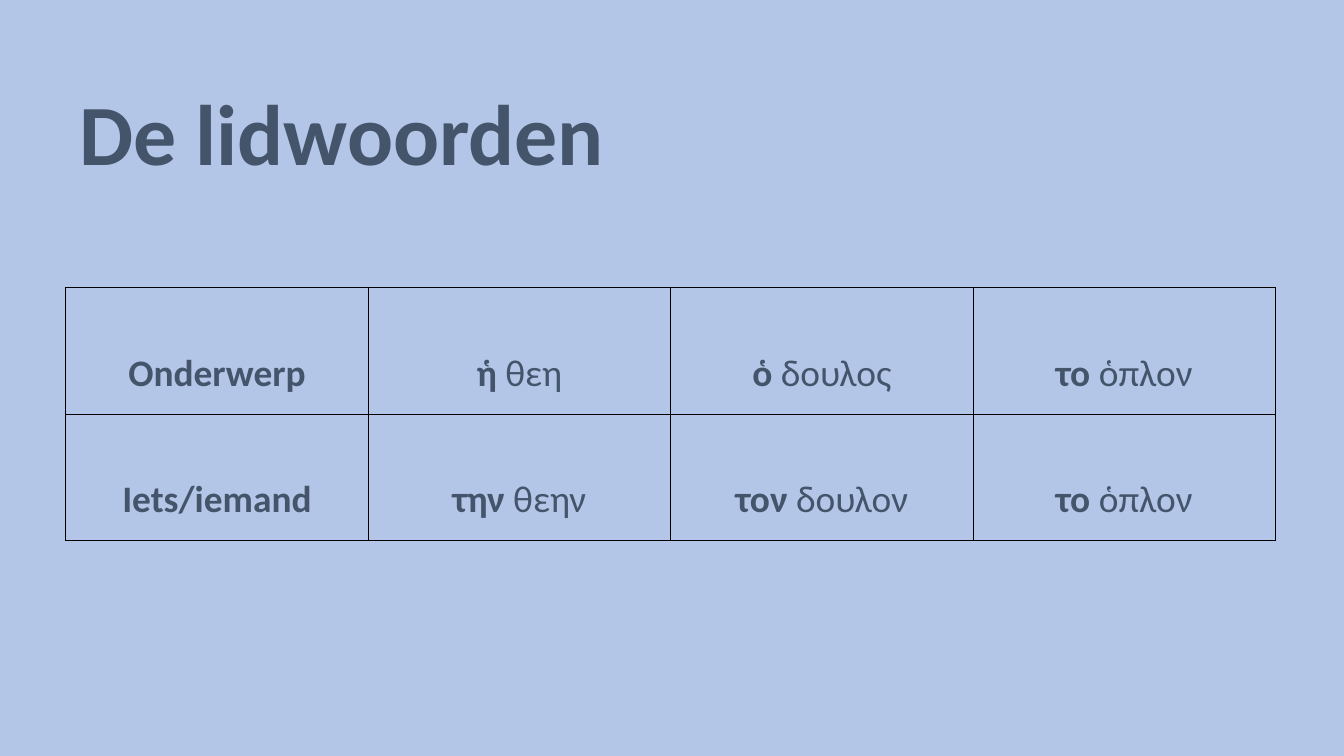
from lxml import etree
from pptx import Presentation
from pptx.dml.color import RGBColor
from pptx.enum.text import MSO_ANCHOR, PP_ALIGN
from pptx.oxml.ns import qn
from pptx.util import Inches, Pt

CENTER = PP_ALIGN.CENTER
MIDDLE = MSO_ANCHOR.MIDDLE
TOP = MSO_ANCHOR.TOP

SLIDE_WIDTH = Inches(10)
SLIDE_HEIGHT = SLIDE_WIDTH * 9 // 16

ROWS = [
    [("Onderwerp", ""), ("ἡ", " θεη"), ("ὁ", " δουλος"), ("το", " ὁπλον")],
    [("Iets/iemand", ""), ("την", " θεην"), ("τον", " δουλον"), ("το", " ὁπλον")],
]


def color(value):
    return RGBColor.from_string(value)


def apply(target, values):
    for name, value in values.items():
        setattr(target, name, value)


class SlideBuilder:
    """Holds the text style and the current slide."""

    font_name = "Calibri"
    text_color = "44546A"
    border_color = "000000"

    def __init__(self, page, background):
        self.page = page
        page.background.fill.solid()
        page.background.fill.fore_color.rgb = color(background)

    def span(self, para, text, size, bold):
        span = para.add_run()
        span.text = text
        apply(span.font, {"name": self.font_name, "size": Pt(size), "bold": bold})
        span.font.color.rgb = color(self.text_color)

    def title(self, text, left, top, width, height):
        box = self.page.shapes.add_textbox(*map(Inches, (left, top, width, height)))
        frame = box.text_frame
        margins = [f"margin_{side}" for side in ("left", "right", "top", "bottom")]
        apply(frame, dict.fromkeys(margins, Inches(0.1)))
        apply(frame, {"word_wrap": True, "vertical_anchor": TOP})
        self.span(frame.paragraphs[0], text, 46, True)

    def borders(self, cell):
        properties = cell._tc.get_or_add_tcPr()
        for index, side in enumerate(("lnL", "lnR", "lnT", "lnB")):
            line = etree.Element(qn(f"a:{side}"), w=str(Pt(0.5)))
            fill = etree.SubElement(line, qn("a:solidFill"))
            etree.SubElement(fill, qn("a:srgbClr"), val=self.border_color)
            properties.insert(index, line)

    def cell(self, cell, article, noun):
        apply(cell, {
            "margin_left": Inches(0.07), "margin_right": Inches(0.07),
            "margin_top": 0, "margin_bottom": 0, "vertical_anchor": MIDDLE,
        })
        cell.fill.background()
        self.borders(cell)
        para = cell.text_frame.paragraphs[0]
        apply(para, {"alignment": CENTER, "line_spacing": 2.0})
        self.span(para, article, 20, True)
        if noun:
            self.span(para, noun, 20, False)

    def table(self, rows, left, top, column_width, row_height):
        count = len(rows[0])
        size = (column_width * count, row_height * len(rows))
        frame = self.page.shapes.add_table(
            len(rows), count, *map(Inches, (left, top, *size)))
        table = frame.table
        apply(table, {"first_row": False, "horz_banding": False})
        for column in table.columns:
            column.width = Inches(column_width)
        for row, entries in zip(table.rows, rows):
            row.height = Inches(row_height)
            for cell, (article, noun) in zip(row.cells, entries):
                self.cell(cell, article, noun)


def main():
    deck = Presentation()
    apply(deck, {"slide_width": SLIDE_WIDTH, "slide_height": SLIDE_HEIGHT})
    page = deck.slides.add_slide(deck.slide_layouts[6])
    builder = SlideBuilder(page, "B3C6E7")
    builder.table(ROWS, 0.49, 2.14, 2.25, 0.94)
    builder.title("De lidwoorden", 0.49, 0.49, 6.06, 0.77)
    deck.save("out.pptx")


if __name__ == "__main__":
    main()
